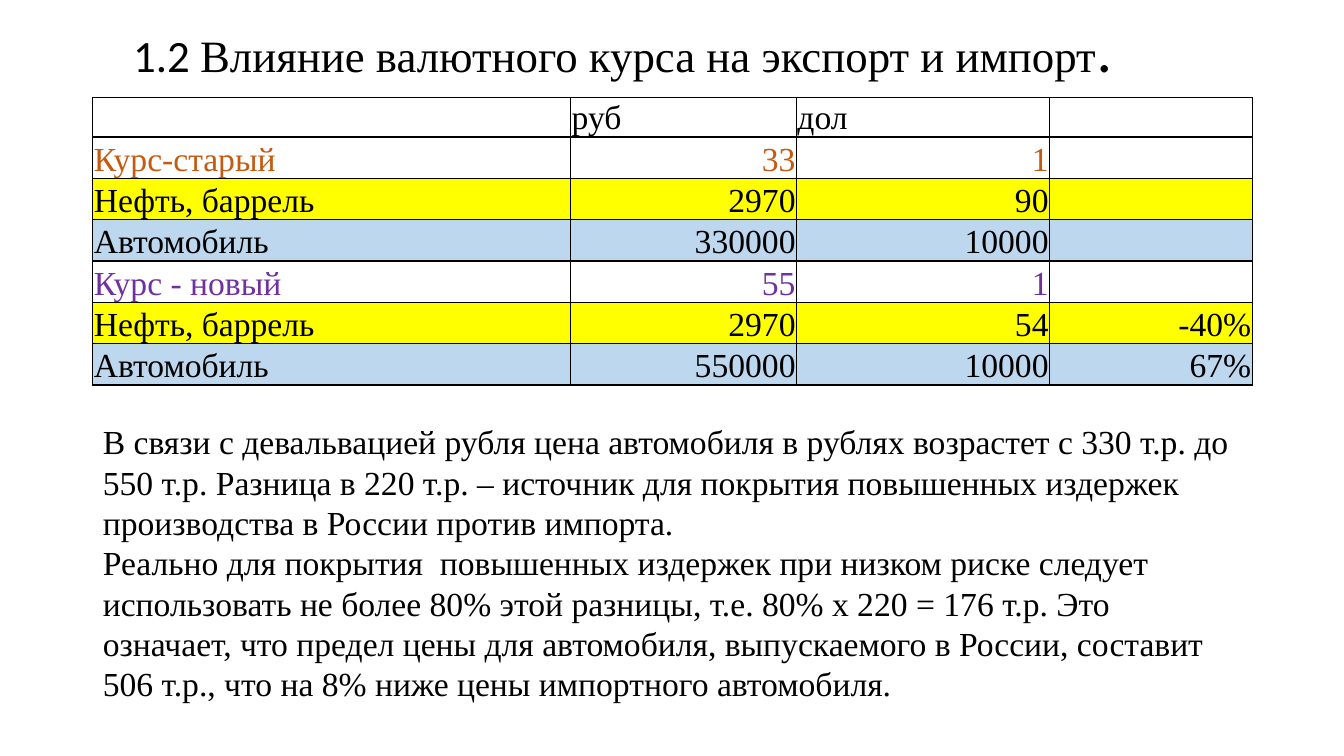
from dataclasses import dataclass

from lxml.etree import SubElement
from pptx import Presentation
from pptx.dml.color import RGBColor as RGB
from pptx.enum.text import MSO_ANCHOR as ANCHOR, MSO_AUTO_SIZE as AUTO, PP_ALIGN as ALIGN
from pptx.oxml.ns import qn
from pptx.util import Inches, Pt


@dataclass(frozen=True)
class Theme:
    serif: str = "Times New Roman"
    sans: str = "Calibri"
    black: str = "000000"
    orange: str = "C55A11"
    purple: str = "7030A0"
    yellow: str = "FFFF00"
    blue: str = "BDD7EE"
    title: int = 32
    dot: int = 44
    text: int = 24
    border: int = 1


T = Theme()
LEFT, WIDTH = 0.92, 11.5  # common column of all parts, inches
COLUMNS = (4.74, 2.24, 2.51, 2.01)
HEAD_ROW, ROW = 0.39, 0.41

# Cell texts, text colour, fill colour
RATE_ROWS = [
    (("", "руб", "дол", ""), T.black, None),
    (("Курс-старый", "33", "1", ""), T.orange, None),
    (("Нефть, баррель", "2970", "90", ""), T.black, T.yellow),
    (("Автомобиль", "330000", "10000", ""), T.black, T.blue),
    (("Курс - новый", "55", "1", ""), T.purple, None),
    (("Нефть, баррель", "2970", "54", "-40%"), T.black, T.yellow),
    (("Автомобиль", "550000", "10000", "67%"), T.black, T.blue),
]

CONCLUSIONS = [
    "В связи с девальвацией рубля цена автомобиля в рублях возрастет с 330 т.р. "
    "до 550 т.р. Разница в 220 т.р. – источник для покрытия повышенных издержек "
    "производства в России против импорта.",
    "Реально для покрытия  повышенных издержек при низком риске следует "
    "использовать не более 80% этой разницы, т.е. 80% х 220 = 176 т.р. Это "
    "означает, что предел цены для автомобиля, выпускаемого в России, составит "
    "506 т.р., что на 8% ниже цены импортного автомобиля.",
]


def add_run(p, text, size=T.text, font=T.serif, color=T.black):
    r = p.add_run()
    r.text = text
    r.font.size, r.font.name = Pt(size), font
    r.font.color.rgb = RGB.from_string(color)


def place(sp, box):
    sp.left, sp.top, sp.width, sp.height = (Inches(v) for v in box)


def fill_title(sp, box):
    place(sp, box)
    tf = sp.text_frame
    tf.auto_size, tf.vertical_anchor = AUTO.NONE, ANCHOR.MIDDLE
    tf.margin_left = Inches(0.4)
    p = tf.paragraphs[0]
    p.alignment, p.line_spacing = ALIGN.LEFT, 0.9
    add_run(p, "1.2 ", T.title, T.sans)
    add_run(p, "Влияние валютного курса на экспорт и импорт", T.title)
    add_run(p, ".", T.dot, T.sans)


def add_borders(cell):
    tc_pr = cell._tc.get_or_add_tcPr()
    for i, side in enumerate(("lnL", "lnR", "lnT", "lnB")):
        ln = tc_pr.makeelement(qn(f"a:{side}"), {"w": str(Pt(T.border))})
        solid = SubElement(ln, qn("a:solidFill"))
        SubElement(solid, qn("a:srgbClr"), val=T.black)
        tc_pr.insert(i, ln)  # borders come before the fill


def fill_cell(cell, text, align, color, fill):
    cell.margin_left = cell.margin_right = cell.margin_top = Inches(0.01)
    cell.margin_bottom = 0
    cell.vertical_anchor = ANCHOR.BOTTOM
    if fill:
        cell.fill.solid()
        cell.fill.fore_color.rgb = RGB.from_string(fill)
    else:
        cell.fill.background()
    add_borders(cell)
    if text:
        p = cell.text_frame.paragraphs[0]
        p.alignment = align
        add_run(p, text, color=color)


def add_rates(slide, box):
    frame = slide.shapes.add_table(len(RATE_ROWS), len(COLUMNS), *(Inches(v) for v in box))
    table = frame.table
    table.first_row = table.horz_banding = False
    for column, width in zip(table.columns, COLUMNS):
        column.width = Inches(width)
    for i, (texts, color, fill) in enumerate(RATE_ROWS):
        table.rows[i].height = Inches(ROW if i else HEAD_ROW)
        for j, text in enumerate(texts):
            align = ALIGN.RIGHT if i and j else ALIGN.LEFT
            fill_cell(table.cell(i, j), text, align, color, fill)


def fill_conclusions(sp, box):
    place(sp, box)
    tf = sp.text_frame
    tf.word_wrap, tf.auto_size, tf.vertical_anchor = True, AUTO.NONE, ANCHOR.TOP
    for i, text in enumerate(CONCLUSIONS):
        p = tf.add_paragraph() if i else tf.paragraphs[0]
        p.alignment, p.space_before = ALIGN.LEFT, Pt(0)
        p_pr = p._p.get_or_add_pPr()
        p_pr.set("marL", "0")
        p_pr.set("indent", "0")
        SubElement(p_pr, qn("a:buNone"))
        add_run(p, text)


def main():
    prs = Presentation()
    prs.slide_width, prs.slide_height = Inches(13.33), Inches(7.5)
    slide = prs.slides.add_slide(prs.slide_layouts[1])
    title, body = slide.placeholders
    fill_title(title, (LEFT, 0.04, WIDTH, 0.97))
    table_height = HEAD_ROW + ROW * (len(RATE_ROWS) - 1)
    add_rates(slide, (LEFT, 0.97, WIDTH, table_height))
    fill_conclusions(body, (LEFT, 4.13, WIDTH, 2.93))
    prs.save("out.pptx")


if __name__ == "__main__":
    main()
